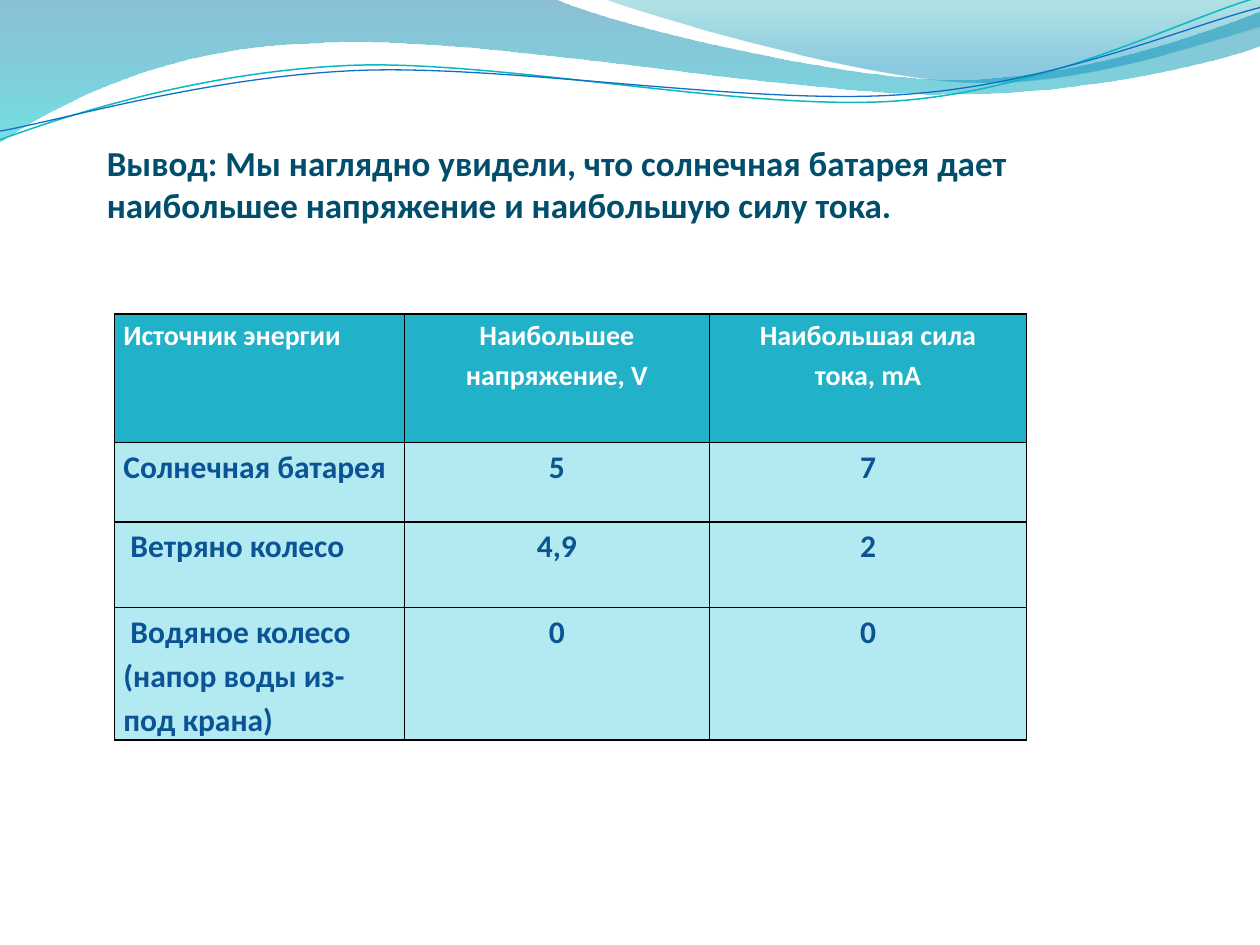
"""Build a slide with a wave header, a conclusion and a table of energy sources."""
import dataclasses
import math

import lxml.etree
import pptx
import pptx.dml.color
import pptx.enum.text
import pptx.oxml.ns
import pptx.util

Pt = pptx.util.Pt
qn = pptx.oxml.ns.qn
Align = pptx.enum.text.PP_ALIGN


@dataclasses.dataclass(frozen=True)
class Theme:
    font: str = "Calibri"
    title_size: float = 20
    header_size: float = 16
    body_size: float = 18
    title: str = "004E6C"
    header_text: str = "FFFFFF"
    header_fill: str = "21B2C9"
    body_text: str = "0B5394"
    body_fill: str = "B3EAF2"
    border: str = "000000"
    back_wave: tuple = ((0, "0074A1", 45), (1, "00C6CF", 55))
    front_wave: tuple = ((0, "00A1A9", 30), (0.8, "008BBF", 45))
    teal_line: str = "0AB8BF"
    blue_line: str = "0F6FC6"


def rgb(value):
    return pptx.dml.color.RGBColor.from_string(value)


def write(para, text, *, font, size, color, align=Align.LEFT, spacing=1.0, after=0):
    para.alignment = align
    para.line_spacing = spacing
    para.space_before = Pt(0)
    para.space_after = Pt(after)
    span = para.add_run()
    span.text = text
    span.font.name = font
    span.font.size = Pt(size)
    span.font.bold = True
    span.font.color.rgb = rgb(color)


def pairs(segment):
    return list(zip(segment[::2], segment[1::2]))


def turn(segment, center, degrees):
    angle = math.radians(degrees)
    cos, sin = math.cos(angle), math.sin(angle)
    turned = []
    for x, y in pairs(segment):
        dx, dy = x - center[0], y - center[1]
        turned += [center[0] + dx * cos - dy * sin, center[1] + dx * sin + dy * cos]
    return turned


class SlideBuilder:
    def __init__(self, page, theme):
        self.page = page
        self.theme = theme

    def outline(self, start, segments, closed):
        corners = [(Pt(x), Pt(y)) for x, y in (segment[-2:] for segment in segments)]
        pen = self.page.shapes.build_freeform(Pt(start[0]), Pt(start[1]))
        pen.add_line_segments(corners, close=closed)
        shape = pen.convert_to_shape()
        shape.shadow.inherit = False
        lines = list(shape._element.spPr.iter(qn("a:lnTo")))
        for line, segment in zip(lines, segments):
            if len(segment) == 6:
                bend = lxml.etree.Element(qn("a:cubicBezTo"))
                for x, y in pairs(segment):
                    lxml.etree.SubElement(bend, qn("a:pt"), x=str(Pt(x) - shape.left),
                                          y=str(Pt(y) - shape.top))
                line.getparent().replace(line, bend)
        return shape

    def wave(self, stops, start, *segments):
        shape = self.outline(start, segments, True)
        shape.line.fill.background()
        shape.fill.gradient()
        shape.fill.gradient_angle = 270
        for stop, (position, color, _) in zip(shape.fill.gradient_stops, stops):
            stop.position = position
            stop.color.rgb = rgb(color)
        colors = shape._element.spPr.iter(qn("a:srgbClr"))
        for node, (_, _, opacity) in zip(colors, stops):
            lxml.etree.SubElement(node, qn("a:alpha"), val=str(opacity * 1000))

    def curve(self, color, width, center, start, *segments, tilt=-2.7):
        level = [turn(segment, center, -tilt) for segment in (start, *segments)]
        shape = self.outline(level[0], level[1:], False)
        shape.rotation = tilt
        shape.fill.background()
        shape.line.color.rgb = rgb(color)
        shape.line.width = Pt(width)

    def title(self, text, left, top, width, height):
        box = self.page.shapes.title
        box.left, box.top, box.width, box.height = map(Pt, (left, top, width, height))
        box.text_frame.word_wrap = True
        box.text_frame.auto_size = pptx.enum.text.MSO_AUTO_SIZE.NONE
        write(box.text_frame.paragraphs[0], text, font=self.theme.font,
              size=self.theme.title_size, color=self.theme.title)

    def border(self, cell):
        properties = cell._tc.get_or_add_tcPr()
        for side in ("a:lnL", "a:lnR", "a:lnT", "a:lnB"):
            line = lxml.etree.SubElement(properties, qn(side), w=str(Pt(1)))
            fill = lxml.etree.SubElement(line, qn("a:solidFill"))
            lxml.etree.SubElement(fill, qn("a:srgbClr"), val=self.theme.border)

    def cell(self, cell, text, header, align):
        theme = self.theme
        cell.margin_left = cell.margin_right = Pt(5)
        cell.margin_top = cell.margin_bottom = Pt(0)
        self.border(cell)
        cell.fill.solid()
        cell.fill.fore_color.rgb = rgb(theme.header_fill if header else theme.body_fill)
        lines = text.split("\n")
        for index, line in enumerate(lines):
            frame = cell.text_frame
            para = frame.add_paragraph() if index else frame.paragraphs[0]
            write(para, line, font=theme.font, align=align, spacing=1.15,
                  size=theme.header_size if header else theme.body_size,
                  color=theme.header_text if header else theme.body_text,
                  after=10 if len(lines) == 1 else 0)

    def table(self, rows, left, top, widths, heights, full_height):
        box = self.page.shapes.add_table(
            len(rows), len(widths), Pt(left), Pt(top), Pt(sum(widths)), Pt(full_height))
        table = box.table
        table.first_row = table.horz_banding = False
        for column, width in zip(table.columns, widths):
            column.width = Pt(width)
        for i, (texts, height) in enumerate(zip(rows, heights)):
            table.rows[i].height = Pt(height)
            for j, text in enumerate(texts):
                self.cell(table.cell(i, j), text, i == 0,
                          Align.CENTER if j else Align.LEFT)
        box.height = Pt(full_height)


def main():
    theme = Theme()
    deck = pptx.Presentation()
    deck.slide_width, deck.slide_height = Pt(720), Pt(540)
    slide = SlideBuilder(deck.slides.add_slide(deck.slide_layouts[5]), theme)

    slide.wave(theme.back_wave, (0, 0), (316.8, -0.7),
               (342.7, 12.2, 478.1, 45.4, 545.8, 45.4),
               (614.2, 45.4, 689.8, 18.7, 720, 6.5), (720.7, 25.9),
               (707.8, 31.7, 626.4, 54.7, 537.1, 54),
               (447.8, 54, 275, 20.2, 185, 24.5),
               (92.9, 25.9, 33.1, 59.8, -0.7, 81.4))
    slide.wave(theme.front_wave, (344.9, -0.7),
               (366.5, 7.9, 491, 44.6, 553.7, 46.8),
               (616.3, 49.7, 691.9, 23, 720, 15.1), (720, 0))
    slide.curve(theme.teal_line, 0.85, (359.3, 41.4), (0, 79.9),
                (34.6, 67, 113.8, 41, 199.4, 37.4),
                (284.4, 33.8, 427, 64.1, 513.4, 57.6),
                (599.8, 51.1, 675.4, 10.8, 718.6, -1.4))
    slide.curve(theme.blue_line, 0.75, (359.6, 42.5), (0, 74.9),
                (33.8, 69.1, 118.1, 43.9, 203.8, 40.3),
                (290.2, 36.7, 429.8, 60.5, 516.2, 54),
                (601.9, 48.2, 677.5, 15.1, 720, 4.3))
    slide.title("Вывод: Мы наглядно увидели, что солнечная батарея дает "
                "наибольшее напряжение и наибольшую силу тока.", 53.8, 77, 578, 55.5)
    slide.table([
        ("Источник энергии", "Наибольшее\nнапряжение, V", "Наибольшая сила\nтока, mA"),
        ("Солнечная батарея", "5", "7"),
        (" Ветряно колесо", "4,9", "2"),
        (" Водяное колесо (напор воды из- под крана)", "0", "0"),
    ], 65.5, 179.4, (165.6, 174.2, 181.4), (73.4, 45.4, 49, 56.9), 242.6)
    deck.save("out.pptx")


if __name__ == "__main__":
    main()
